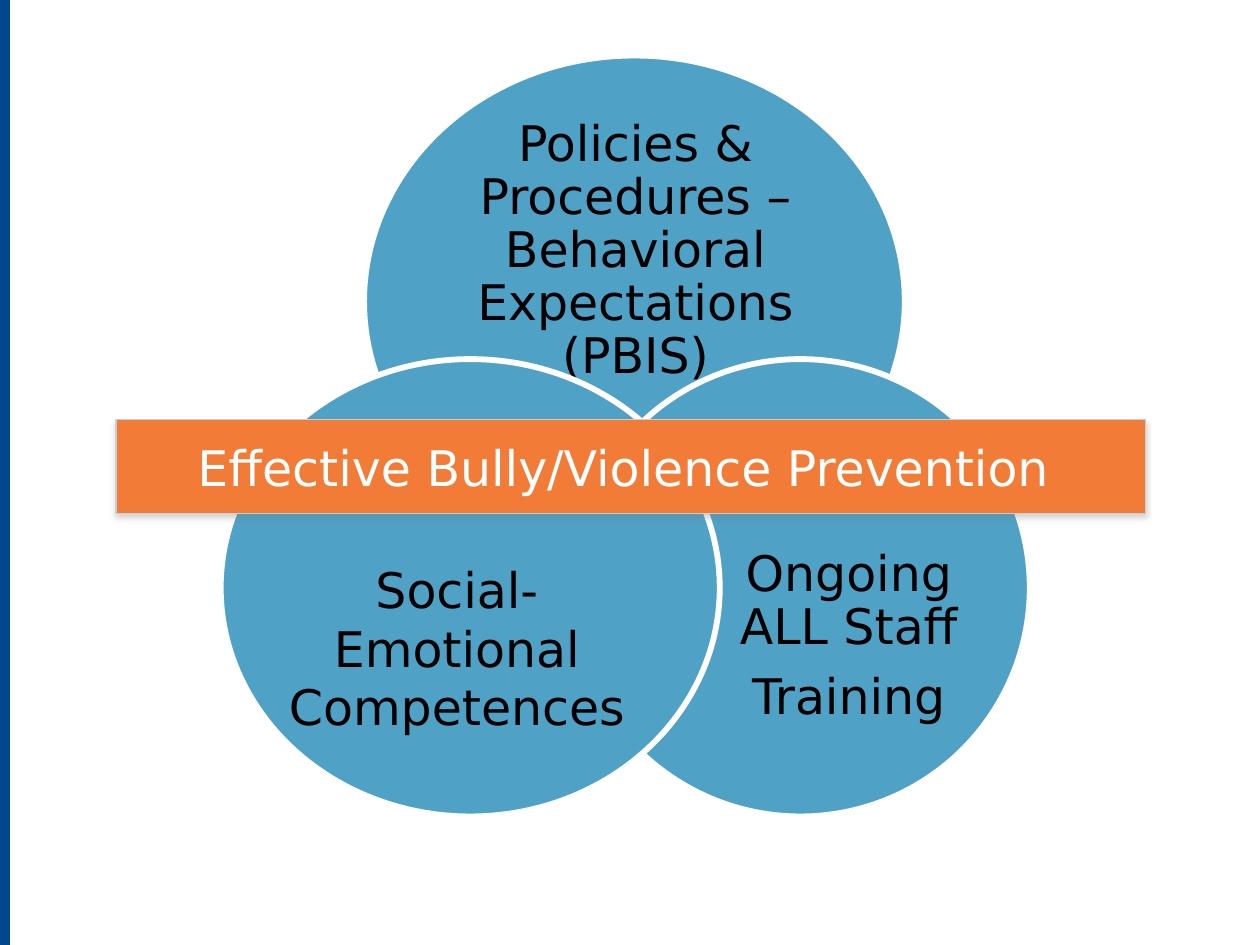
from lxml import etree
from pptx import Presentation, util as u
from pptx.dml.color import RGBColor
from pptx.enum import shapes, text
from pptx.oxml.ns import qn

FONT = {"name": "DejaVu Sans", "size": u.Pt(28)}
TIGHT = {"line_spacing": 0.9, "space_after": u.Pt(9.8)}
NO_INSETS = dict.fromkeys(
    ("margin_left", "margin_top", "margin_right", "margin_bottom"), 0)
MIDDLE = {"vertical_anchor": text.MSO_ANCHOR.MIDDLE}


def rgb(value):
    return RGBColor.from_string(value)


def apply(target, values):
    for key, value in values.items():
        setattr(target, key, value)


def place(box, part):
    left, top = box[:2]
    x, y, width, height = part
    return [u.Cm(v) for v in (left + x, top + y, width, height)]


def add_filled(slide, kind, box, part, fill, line=None, line_width=0):
    sp = slide.shapes.add_shape(kind, *place(box, part))
    sp.shadow.inherit = False
    sp.fill.solid()
    sp.fill.fore_color.rgb = rgb(fill)
    if line:
        sp.line.color.rgb = rgb(line)
        sp.line.width = u.Pt(line_width)
    else:
        sp.line.fill.background()
    return sp


def write(sp, lines, color, frame=None, paragraph=None):
    tf = sp.text_frame
    tf.word_wrap = True
    apply(tf, frame or {})
    for i, line in enumerate(lines):
        p = tf.add_paragraph() if i else tf.paragraphs[0]
        p.alignment = text.PP_ALIGN.CENTER
        apply(p, paragraph or {})
        r = p.add_run()
        r.text = line
        apply(r.font, FONT)
        r.font.color.rgb = rgb(color)


def add_shadow(sp, color, alpha, blur, distance):
    effects = sp._element.spPr.find(qn("a:effectLst"))
    shadow = etree.SubElement(
        effects, qn("a:outerShdw"), blurRad=str(u.Pt(blur)),
        dist=str(u.Pt(distance)), dir="5400000", algn="t", rotWithShape="0")
    tint = etree.SubElement(shadow, qn("a:srgbClr"), val=color)
    etree.SubElement(tint, qn("a:alpha"), val=str(alpha * 1000))


def add_sidebar(slide, box):
    add_filled(slide, shapes.MSO_SHAPE.RECTANGLE, box, (0, 0, *box[2:]), "00478B")


def add_venn(slide, box):
    tight_frame = {**NO_INSETS, **MIDDLE}
    circles = [
        ((2.89, 0, 10.9, 9.91), (4.36, 1.72, 8, 4.47),
         ["Policies & Procedures –Behavioral Expectations (PBIS)"],
         tight_frame, TIGHT),
        ((7.06, 6.12, 9.25, 9.22), (9.88, 9.9, 5.56, 3.66),
         ["Ongoing ALL Staff", "Training"], tight_frame, TIGHT),
        ((0, 6.12, 10.06, 9.22), (0.81, 10.03, 7.9, 3.84),
         ["Social-Emotional Competences"], {}, {}),
    ]
    for circle, label, lines, frame, paragraph in circles:
        add_filled(slide, shapes.MSO_SHAPE.OVAL, box, circle,
                   "4FA1C6", "FFFFFF", 3.35)
        label_box = slide.shapes.add_textbox(*place(box, label))
        write(label_box, lines, "000000", frame, paragraph)


def add_banner(slide, box):
    sp = add_filled(slide, shapes.MSO_SHAPE.RECTANGLE, box, (0, 0, *box[2:]),
                    "F27B37", "C5D1D7", 0.75)
    add_shadow(sp, "808080", 35, 3.1, 1.8)
    write(sp, ["Effective Bully/Violence Prevention "], "FFFFFF", MIDDLE)


def main():
    prs = Presentation()
    prs.slide_width, prs.slide_height = u.Cm(25.4), u.Cm(19.05)
    slide = prs.slides.add_slide(prs.slide_layouts[6])
    add_sidebar(slide, (0, 0, 0.2, 19.05))
    add_venn(slide, (4.45, 1.12, 16.31, 15.34))
    add_banner(slide, (2.34, 8.46, 20.75, 1.9))
    prs.save("out.pptx")


if __name__ == "__main__":
    main()
